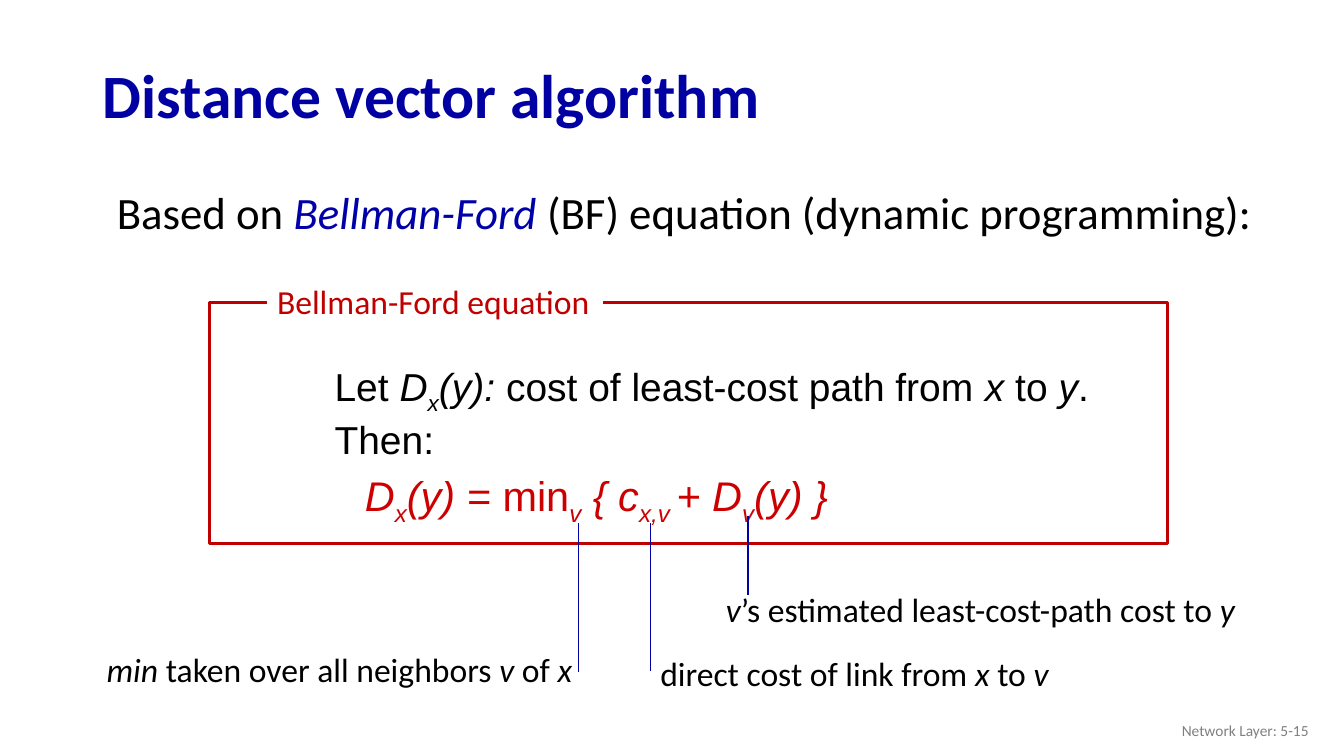
from pptx import Presentation
from pptx.dml.color import RGBColor
from pptx.enum.shapes import MSO_CONNECTOR, MSO_SHAPE
from pptx.enum.text import MSO_ANCHOR, PP_ALIGN
from pptx.oxml.ns import qn
from pptx.util import Inches, Pt
from lxml import etree

NAVY = RGBColor(0x00, 0x00, 0xA3)
BLUE = RGBColor(0x00, 0x00, 0xA8)
DARK_RED = RGBColor(0xC0, 0x00, 0x00)
RED = RGBColor(0xCC, 0x00, 0x00)
BLACK = RGBColor(0x00, 0x00, 0x00)
GRAY = RGBColor(0x80, 0x80, 0x80)
WHITE = RGBColor(0xFF, 0xFF, 0xFF)

# Content: runs are (text, style); i = italic, s = subscript, b = blue
TITLE = "Distance vector algorithm"
INTRO = [("Based on ", ""), ("Bellman-Ford", "ib"),
         (" (BF) equation (dynamic programming):", "")]
BOX_LABEL = [("Bellman-Ford equation", "")]
FOOTER = [("Network Layer: 5-15", "")]

# Equation lines: runs, size, colour, left indent
EQUATION = [
    ([("Let ", ""), ("D", "i"), ("x", "is"), ("(y): ", "i"),
      ("cost of least-cost path from ", ""), ("x", "i"), (" to ", ""),
      ("y", "i"), (".", "")], 27.8, BLACK, 0.15),
    ([("Then:", "")], 27.8, BLACK, 0.15),
    ([("D", "i"), ("x", "is"), ("(y) = ", "i"), ("min", ""), ("v", "is"),
      (" { c", "i"), ("x,v ", "is"), ("+ D", "i"), ("v", "is"),
      ("(y) }", "i")], 29.6, RED, 0.45),
]

# Notes: runs, text box, x of the pointer, its top and bottom
NOTES = [
    ([("min", "i"), (" taken over all neighbors", ""), (" v ", "i"),
      ("of ", ""), ("x", "i")], (0.96, 6.39, 4.86, 0.5), 5.74, 5.19, 6.67),
    ([("v", "i"), ("’s estimated least-cost-path cost to ", ""), ("y", "i")],
     (7.1, 5.79, 5.31, 0.5), 7.42, 5.12, 5.9),
    ([("direct cost of link from", ""), (" x ", "i"), ("to ", ""),
      ("v", "i")], (6.45, 6.43, 4.08, 0.5), 6.45, 5.19, 6.66),
]


def add_runs(p, runs, size, color, font="Calibri"):
    for text, style in runs:
        r = p.add_run()
        r.text = text
        r.font.name = font
        r.font.size = Pt(size)
        r.font.italic = "i" in style
        r.font.color.rgb = BLUE if "b" in style else color
        if "s" in style:
            r.font._element.set("baseline", "-25000")


def add_text(s, box, runs, size, color, wrap=False):
    sp = s.shapes.add_textbox(*map(Inches, box))
    sp.text_frame.word_wrap = wrap
    p = sp.text_frame.paragraphs[0]
    add_runs(p, runs, size, color)
    return sp, p


def add_rect(s, box):
    sp = s.shapes.add_shape(MSO_SHAPE.RECTANGLE, *map(Inches, box))
    sp.shadow.inherit = False
    return sp


def main():
    prs = Presentation()
    prs.slide_width, prs.slide_height = Inches(13.33), Inches(7.5)
    s = prs.slides.add_slide(prs.slide_layouts[5])

    # Title
    sp = s.shapes.title
    sp.left, sp.top, sp.width, sp.height = map(Inches, (0.92, 0.49, 11.5, 0.98))
    sp.text_frame.vertical_anchor = MSO_ANCHOR.MIDDLE
    p = sp.text_frame.paragraphs[0]
    p.alignment = PP_ALIGN.LEFT
    p.line_spacing = 0.9
    add_runs(p, [(TITLE, "")], 44, NAVY)
    p.runs[0].font.bold = True

    # Introduction and footer
    sp, p = add_text(s, (0.92, 1.89, 11.83, 0.57), INTRO, 32, BLACK, True)
    p.line_spacing = 0.8
    p.space_before = Pt(10)
    p._p.get_or_add_pPr().set("marL", str(Inches(0.14)))
    sp, p = add_text(s, (10.08, 7.05, 3, 0.4), FOOTER, 11, GRAY, True)
    sp.text_frame.vertical_anchor = MSO_ANCHOR.MIDDLE
    p.alignment = PP_ALIGN.RIGHT

    # Equation
    sp = s.shapes.add_textbox(*map(Inches, (3.07, 3.6, 8.7, 2.16)))
    tf = sp.text_frame
    tf.word_wrap = True
    for n, (runs, size, color, indent) in enumerate(EQUATION):
        p = tf.add_paragraph() if n else tf.paragraphs[0]
        p.line_spacing = 0.8
        p.space_before = Pt(10)
        p._p.get_or_add_pPr().set("marL", str(Inches(indent)))
        add_runs(p, runs, size, color, "Arial")

    # Frame with its label set into the top edge
    frame = add_rect(s, (2.08, 3, 9.5, 2.39))
    frame.fill.background()
    frame.line.color.rgb = DARK_RED
    frame.line.width = Pt(2)
    label = add_rect(s, (2.65, 2.74, 3.33, 0.5))
    label.fill.solid()
    label.fill.fore_color.rgb = WHITE
    label.line.fill.background()
    label.text_frame.word_wrap = False
    p = label.text_frame.paragraphs[0]
    p.alignment = PP_ALIGN.LEFT
    add_runs(p, BOX_LABEL, 24, DARK_RED)

    # Notes with pointers to the terms
    for runs, box, x, top, bottom in NOTES:
        add_text(s, box, runs, 24, BLACK)
        line = s.shapes.add_connector(MSO_CONNECTOR.STRAIGHT, Inches(x),
                                      Inches(top), Inches(x), Inches(bottom))
        line.line.color.rgb = BLUE
        line.line.width = Pt(1)
        etree.SubElement(line._element.spPr, qn("a:effectLst"))

    prs.save("out.pptx")


if __name__ == "__main__":
    main()
